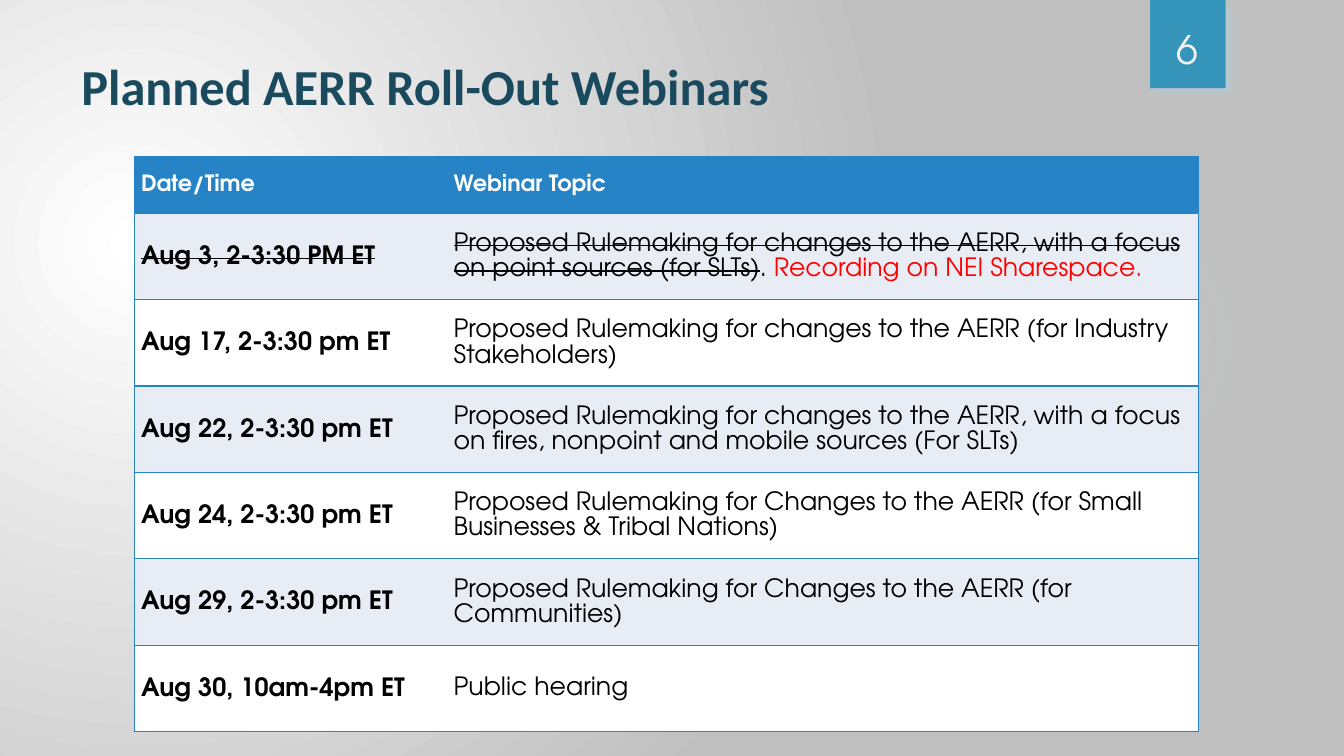
from lxml.etree import SubElement
from pptx import Presentation
from pptx.dml.color import RGBColor
from pptx.enum.shapes import MSO_SHAPE
from pptx.enum.text import MSO_ANCHOR, MSO_AUTO_SIZE, PP_ALIGN
from pptx.oxml.ns import qn
from pptx.util import Pt

TITLE = "Planned AERR Roll-Out Webinars"
PAGE = "6"
HEADINGS = ("Date/Time", "Webinar Topic")
PAST = ("Aug 3, 2-3:30 PM ET",
        "Proposed Rulemaking for changes to the AERR, with a focus on point sources (for SLTs)",
        ". ", "Recording on NEI Sharespace.")
UPCOMING = [
    ("Aug 17, 2-3:30 pm ET",
     "Proposed Rulemaking for changes to the AERR (for Industry Stakeholders)"),
    ("Aug 22, 2-3:30 pm ET",
     "Proposed Rulemaking for changes to the AERR, with a focus on fires, nonpoint and mobile sources (For SLTs)"),
    ("Aug 24, 2-3:30 pm ET",
     "Proposed Rulemaking for Changes to the AERR (for Small Businesses & Tribal Nations)"),
    ("Aug 29, 2-3:30 pm ET",
     "Proposed Rulemaking for Changes to the AERR (for Communities)"),
    ("Aug 30, 10am-4pm ET", "Public hearing"),
]

BODY_FONT = "TeX Gyre Adventor"
NAVY = RGBColor(0x1A, 0x4A, 0x5D)
TEAL = RGBColor(0x34, 0x94, 0xBA)
BLUE = RGBColor(0x26, 0x83, 0xC6)
BAND = RGBColor(0xE8, 0xED, 0xF5)
WHITE = RGBColor(0xFF, 0xFF, 0xFF)
PALE = RGBColor(0xF2, 0xF2, 0xF2)
GREY = RGBColor(0xBF, 0xBF, 0xBF)
GLOW = RGBColor(0xEB, 0xF1, 0xF5)
HALO = RGBColor(0xAA, 0xD6, 0xE7)
BLACK = RGBColor(0, 0, 0)
RED = RGBColor(0xFF, 0, 0)

COLUMNS = (223.2, 537.2)
HEAD_HEIGHT, ROW_HEIGHT = 40.4, 61.7


def add_text(paragraph, text, size=18, color=BLACK, font=BODY_FONT, bold=False, strike=False):
    run = paragraph.add_run()
    run.text = text
    run.font.size = Pt(size)
    run.font.name = font
    run.font.bold = bold
    run.font.color.rgb = color
    if strike:
        run.font._element.set("strike", "sngStrike")


def add_color(parent, color, alpha=100):
    tint = SubElement(parent, qn("a:srgbClr"), val=str(color))
    if alpha < 100:
        SubElement(tint, qn("a:alpha"), val=str(alpha * 1000))


def radial_fill(fill, owner, stops, focus):
    fill.gradient()
    gradient = next(owner.iter(qn("a:gradFill")))
    for child in list(gradient):
        gradient.remove(child)
    stop_list = SubElement(gradient, qn("a:gsLst"))
    for position, color, alpha in stops:
        stop = SubElement(stop_list, qn("a:gs"), pos=str(position * 1000))
        add_color(stop, color, alpha)
    circle = SubElement(gradient, qn("a:path"), path="circle")
    edges = {side: str(value * 1000) for side, value in zip("ltrb", focus)}
    SubElement(circle, qn("a:fillToRect"), **edges)


def add_plain_shape(kind, left, top, width, height):
    shape = slide.shapes.add_shape(kind, Pt(left), Pt(top), Pt(width), Pt(height))
    shape.shadow.inherit = False
    shape.line.fill.background()
    return shape


def format_cell(cell, fill, outer_side):
    cell.vertical_anchor = MSO_ANCHOR.MIDDLE
    cell.margin_left = cell.margin_right = Pt(5)
    cell.margin_top = cell.margin_bottom = 0
    properties = cell._tc.get_or_add_tcPr()
    for side in ("L", "R", "T", "B"):
        border = SubElement(properties, qn(f"a:ln{side}"), w=str(Pt(1)))
        if side in (outer_side, "T", "B"):
            add_color(SubElement(border, qn("a:solidFill")), BLUE)
        else:
            SubElement(border, qn("a:noFill"))
    cell.fill.solid()
    cell.fill.fore_color.rgb = fill
    paragraph = cell.text_frame.paragraphs[0]
    paragraph.line_spacing = 1.07
    return paragraph


presentation = Presentation()
presentation.slide_width, presentation.slide_height = Pt(960), Pt(540)
slide = presentation.slides.add_slide(presentation.slide_layouts[5])
radial_fill(slide.background.fill, slide.element,
            [(0, WHITE, 100), (100, GREY, 100)], (45, 65, 125, 100))

glow = add_plain_shape(MSO_SHAPE.OVAL, 677.5, 131.8, 221.8, 221.8)
radial_fill(glow.fill, glow.element,
            [(0, GLOW, 7), (36, GLOW, 6), (69, GLOW, 0)], (50, 50, 50, 50))

tab = add_plain_shape(MSO_SHAPE.RECTANGLE, 821.5, 0, 54, 63)
tab.fill.solid()
tab.fill.fore_color.rgb = TEAL
shadow = SubElement(tab.element.spPr.find(qn("a:effectLst")), qn("a:outerShdw"),
                    blurRad=str(Pt(4)), dist=str(Pt(5)), dir="2700000")
add_color(shadow, HALO, 40)

title = slide.shapes.title
title.left, title.top, title.width, title.height = Pt(51), Pt(36), Pt(741), Pt(80)
title.text_frame.vertical_anchor = MSO_ANCHOR.TOP
title.text_frame.auto_size = MSO_AUTO_SIZE.NONE
title.text_frame.paragraphs[0].alignment = PP_ALIGN.LEFT
add_text(title.text_frame.paragraphs[0], TITLE, size=36, color=NAVY, font="Calibri", bold=True)

rows = [HEADINGS, PAST[:2], *UPCOMING]
schedule = slide.shapes.add_table(
    len(rows), len(COLUMNS), Pt(95.8), Pt(112), Pt(sum(COLUMNS)),
    Pt(HEAD_HEIGHT + ROW_HEIGHT * (len(rows) - 1))).table
for column, width in zip(schedule.columns, COLUMNS):
    column.width = Pt(width)
for index, entries in enumerate(rows):
    heading, past = index == 0, index == 1
    schedule.rows[index].height = Pt(HEAD_HEIGHT if heading else ROW_HEIGHT)
    fill = BLUE if heading else BAND if index % 2 else WHITE
    for position, entry in enumerate(entries):
        paragraph = format_cell(schedule.cell(index, position), fill, "LR"[position])
        add_text(paragraph, entry, size=16 if heading else 18,
                 color=WHITE if heading else BLACK,
                 bold=heading or position == 0, strike=past)
    if past:
        add_text(paragraph, PAST[2])
        add_text(paragraph, PAST[3], color=RED)

number = slide.shapes.add_textbox(Pt(815), Pt(23), Pt(66.2), Pt(32.4)).text_frame
number.word_wrap = True
number.vertical_anchor = MSO_ANCHOR.BOTTOM
number.paragraphs[0].alignment = PP_ALIGN.CENTER
add_text(number.paragraphs[0], PAGE, size=28, color=PALE)

presentation.save("out.pptx")
